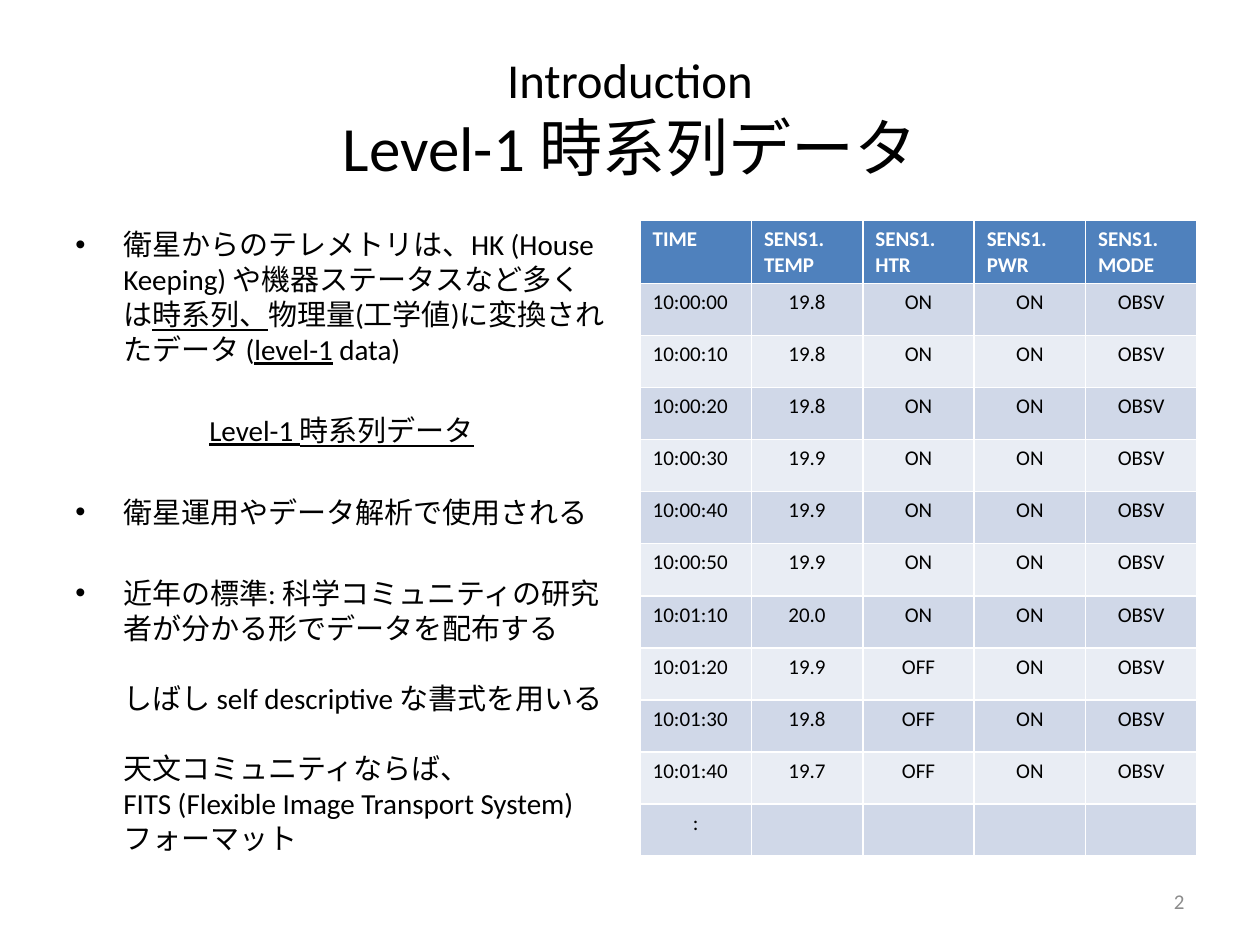
from lxml.etree import SubElement
from pptx import Presentation
from pptx.dml.color import RGBColor as RGB
from pptx.enum.text import MSO_ANCHOR as ANCHOR, PP_ALIGN as ALIGN
from pptx.oxml.ns import qn
from pptx.util import Inches, Pt

FONT = "Calibri"
BLACK, WHITE, GREY = RGB(0, 0, 0), RGB(255, 255, 255), RGB(0x8C, 0x8C, 0x8C)
BLUE, DARK, LIGHT = RGB(0x4F, 0x81, 0xBD), RGB(0xD0, 0xD8, 0xE8), RGB(0xE9, 0xED, 0xF4)

WIDTH, HEIGHT = Inches(10), Inches(7.5)
LEFT, TOP = Inches(0.5), Inches(1.75)
HALF = Inches(4.42)
RIGHT = WIDTH - LEFT - HALF
INDENT = Inches(0.38)
BODY_SIZE, GAP, BREAK = 16.6, 26.6, 20

HEADS = ["TIME"] + [f"SENS1.\n{name}" for name in ("TEMP", "HTR", "PWR", "MODE")]
LOG = [
    ("10:00:00", "19.8", "ON"),
    ("10:00:10", "19.8", "ON"),
    ("10:00:20", "19.8", "ON"),
    ("10:00:30", "19.9", "ON"),
    ("10:00:40", "19.9", "ON"),
    ("10:00:50", "19.9", "ON"),
    ("10:01:10", "20.0", "ON"),
    ("10:01:20", "19.9", "OFF"),
    ("10:01:30", "19.8", "OFF"),
    ("10:01:40", "19.7", "OFF"),
]

# Each paragraph: kind, space before, and (text, underlined) runs
BODY = [
    ("bullet", 0, [
        ("衛星からのテレメトリは、HK (House Keeping) や機器ステータスなど多くは", False),
        ("時系列、", True),
        ("物理量(工学値)に変換されたデータ (", False),
        ("level-1", True),
        (" data)", False),
    ]),
    ("centre", GAP, [("Level-1 時系列データ", True)]),
    ("bullet", GAP, [("衛星運用やデータ解析で使用される", False)]),
    ("bullet", GAP, [("近年の標準: 科学コミュニティの研究者が分かる形でデータを配布する", False)]),
    ("plain", BREAK, [("しばし self descriptive な書式を用いる", False)]),
    ("plain", BREAK, [("天文コミュニティならば、", False)]),
    ("plain", 0, [("FITS (Flexible Image Transport System) フォーマット", False)]),
]


def style(font, size, color=BLACK, bold=False):
    font.name, font.size, font.bold = FONT, Pt(size), bold
    font.color.rgb = color


def indent(para, bullet):
    """Indent a paragraph, hanging a bullet in the margin if wanted."""
    props = para._p.get_or_add_pPr()
    props.set("marL", str(INDENT))
    if bullet:
        props.set("indent", str(-INDENT))
        SubElement(props, qn("a:buFont")).set("typeface", "Arial")
        SubElement(props, qn("a:buChar")).set("char", "•")


def add_title(slide):
    title = slide.shapes.title
    title.left, title.top = LEFT, Inches(0.3)
    title.width, title.height = WIDTH - 2 * LEFT, Inches(1.25)
    frame = title.text_frame
    frame.vertical_anchor = ANCHOR.MIDDLE
    para = frame.paragraphs[0]
    para.text = "Introduction\vLevel-1 時系列データ"
    para.alignment = ALIGN.CENTER
    for run, size in zip(para.runs, (27.9, 36)):
        style(run.font, size)


def add_body(slide):
    box = slide.shapes.add_textbox(LEFT, TOP, HALF, Inches(4.95))
    frame = box.text_frame
    frame.word_wrap = True
    for i, (kind, before, runs) in enumerate(BODY):
        para = frame.add_paragraph() if i else frame.paragraphs[0]
        para.space_before = Pt(before)
        if kind == "centre":
            para.alignment = ALIGN.CENTER
        else:
            indent(para, kind == "bullet")
        for text, line in runs:
            run = para.add_run()
            run.text = text
            style(run.font, BODY_SIZE)
            run.font.underline = line


def fill_cell(cell, text, fill, color, bold, align):
    cell.fill.solid()
    cell.fill.fore_color.rgb = fill
    cell.text_frame.text = text
    for para in cell.text_frame.paragraphs:
        para.alignment = align
        style(para.font, 12, color, bold)
        for run in para.runs:
            style(run.font, 12, color, bold)


def add_log(slide):
    rows = [HEADS] + [(*row, "ON", "OBSV") for row in LOG] + [(":", "", "", "", "")]
    frame = slide.shapes.add_table(len(rows), len(HEADS), RIGHT, TOP, HALF, Inches(4.96))
    for r, row in enumerate(rows):
        head = r == 0
        fill = BLUE if head else DARK if r % 2 else LIGHT
        for c, text in enumerate(row):
            left = head or (c == 0 and text != ":")
            fill_cell(frame.table.cell(r, c), text, fill, WHITE if head else BLACK,
                      head, ALIGN.LEFT if left else ALIGN.CENTER)


def add_number(slide):
    wide = Inches(2.33)
    box = slide.shapes.add_textbox(WIDTH - LEFT - wide, Inches(6.95), wide, Inches(0.4))
    frame = box.text_frame
    frame.word_wrap = True
    frame.vertical_anchor = ANCHOR.MIDDLE
    frame.text = "2"
    para = frame.paragraphs[0]
    para.alignment = ALIGN.RIGHT
    style(para.runs[0].font, 12, GREY)


def main():
    deck = Presentation()
    deck.slide_width, deck.slide_height = WIDTH, HEIGHT
    slide = deck.slides.add_slide(deck.slide_layouts[5])
    add_title(slide)
    add_body(slide)
    add_log(slide)
    add_number(slide)
    deck.save("out.pptx")


if __name__ == "__main__":
    main()
